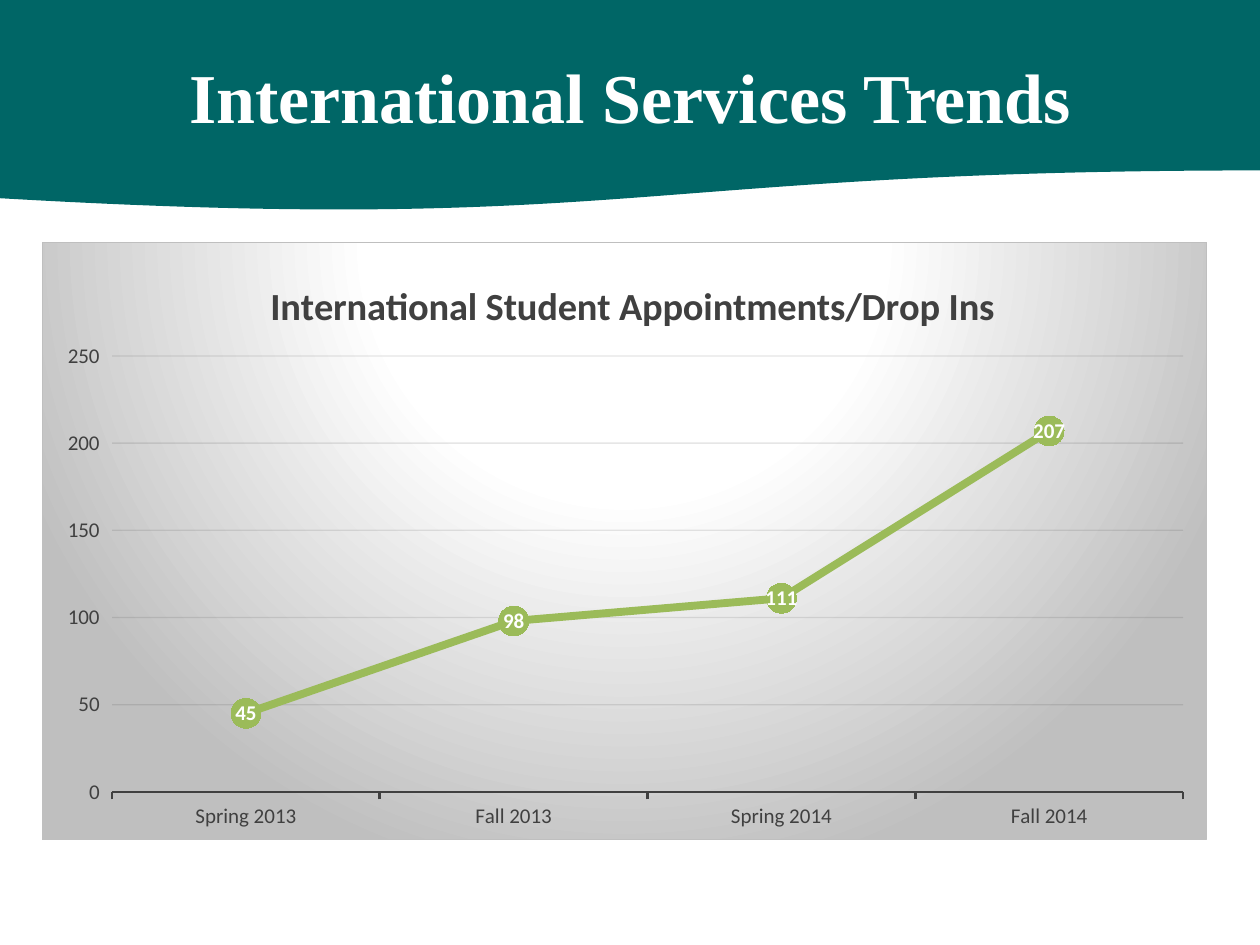
from lxml import etree
from pptx import Presentation
from pptx import util as u
from pptx.chart import data as cd
from pptx.dml import color as dc
from pptx.enum import chart as ec, shapes, text
from pptx.oxml import ns, parse_xml

NS = ns.nsdecls("a", "c")


def rgb(code):
    return dc.RGBColor.from_string(code)


def style(font, size, color, bold=False, name="Calibri"):
    font.size = u.Pt(size)
    font.color.rgb = rgb(color)
    font.bold = bold
    font.name = name


def write(frame, words, align=text.PP_ALIGN.CENTER, **look):
    para = frame.paragraphs[0]
    para.alignment = align
    run = para.add_run()
    run.text = words
    style(run.font, **look)


def stroke(line, color, width):
    line.color.rgb = rgb(color)
    line.width = u.Pt(width)


def layout(x, y, w=None, h=None, inner=False):
    parts = [("xMode", "edge"), ("yMode", "edge"), ("x", x), ("y", y)]
    if inner:
        parts = [("layoutTarget", "inner")] + parts + [("w", w), ("h", h)]
    body = "".join(f'<c:{tag} val="{val}"/>' for tag, val in parts)
    return parse_xml(f"<c:layout {NS}><c:manualLayout>{body}</c:manualLayout></c:layout>")


def place(node, item, after=None):
    for old in node.findall(ns.qn("c:layout")):
        node.remove(old)
    if after is None:
        node.insert(0, item)
    else:
        node.find(ns.qn(after)).addnext(item)


class Deck:
    teal, green, ink, gray, white = "006666", "9BBB59", "404040", "BFBFBF", "FFFFFF"

    def __init__(self):
        self.prs = Presentation()
        self.prs.slide_width = u.Inches(10)
        self.prs.slide_height = u.Inches(7.5)
        self.slide = self.prs.slides.add_slide(self.prs.slide_layouts[5])

    def box(self, *sides):
        return [u.Inches(side) for side in sides]

    def banner(self, *sides):
        wave = self.slide.shapes.add_shape(
            shapes.MSO_SHAPE.FLOWCHART_DOCUMENT, *self.box(*sides))
        wave.shadow.inherit = False
        wave.fill.solid()
        wave.fill.fore_color.rgb = rgb(self.teal)
        stroke(wave.line, self.teal, 2)

    def title(self, words, *sides):
        head = self.slide.shapes.title
        head.left, head.top, head.width, head.height = self.box(*sides)
        frame = head.text_frame
        frame.margin_left = frame.margin_right = u.Inches(0.04)
        frame.margin_top = frame.margin_bottom = u.Inches(0.04)
        frame.vertical_anchor = text.MSO_ANCHOR.MIDDLE
        frame.auto_size = text.MSO_AUTO_SIZE.NONE
        frame.word_wrap = True
        write(frame, words, size=40, color=self.white, bold=True, name="Times New Roman")
        self.slide.shapes._spTree.append(head._element)

    def chart(self, words, cats, vals, *sides):
        data = cd.CategoryChartData()
        data.categories = cats
        data.add_series("Series 1", vals)
        chart = self.slide.shapes.add_chart(
            ec.XL_CHART_TYPE.LINE_MARKERS, *self.box(*sides), data).chart
        style(chart.font, 10, "000000")
        chart.has_legend = False
        chart.has_title = True
        write(chart.chart_title.text_frame, words, size=22, color=self.ink, bold=True)
        chart.chart_title.include_in_layout = False
        place(chart.chart_title._element, layout(0.19, 0.05), "c:tx")
        self.axes(chart)
        self.series(chart.plots[0])
        root = chart._chartSpace
        place(root.chart.plotArea, layout(0.06, 0.19, 0.92, 0.73, True))
        root.chart.addnext(self.back())

    def axes(self, chart):
        for axis in (chart.category_axis, chart.value_axis):
            axis.major_tick_mark = ec.XL_TICK_MARK.OUTSIDE
            style(axis.tick_labels.font, 12, self.ink)
        stroke(chart.category_axis.format.line, self.ink, 1.5)
        side = chart.value_axis
        side.minimum_scale, side.maximum_scale, side.major_unit = 0, 250, 50
        side.format.line.fill.background()
        grid = side.major_gridlines.format.line
        stroke(grid, "0D0D0D", 0.75)
        for tint in side.major_gridlines._xAx.iter(ns.qn("a:srgbClr")):
            if tint.get("val") == "0D0D0D":
                etree.SubElement(tint, ns.qn("a:alpha"), val="10000")

    def series(self, plot):
        plot.vary_by_categories = False
        row = plot.series[0]
        row.smooth = False
        stroke(row.format.line, self.green, 4.5)
        row.marker.style = ec.XL_MARKER_STYLE.CIRCLE
        row.marker.size = 17
        row.marker.format.fill.solid()
        row.marker.format.fill.fore_color.rgb = rgb(self.green)
        row.marker.format.line.fill.background()
        tags = row.data_labels
        tags.show_value = True
        tags.position = ec.XL_LABEL_POSITION.CENTER
        style(tags.font, 12, self.white, True)

    def back(self):
        stops = [(0, self.white), (39, self.white), (100, self.gray)]
        body = "".join(f'<a:gs pos="{pos * 1000}"><a:srgbClr val="{tone}"/></a:gs>'
                       for pos, tone in stops)
        return parse_xml(
            f'<c:spPr {NS}><a:gradFill><a:gsLst>{body}</a:gsLst><a:path path="circle">'
            '<a:fillToRect l="50000" t="-80000" r="50000" b="180000"/></a:path></a:gradFill>'
            f'<a:ln w="{u.Pt(0.75)}"><a:solidFill><a:srgbClr val="{self.gray}"/>'
            '</a:solidFill></a:ln></c:spPr>')


def main():
    deck = Deck()
    deck.banner(0, 0, 10, 1.67)
    deck.title("International Services Trends", 0.5, 0.33, 9, 0.86)
    deck.chart("International Student Appointments/Drop Ins",
               ["Spring 2013", "Fall 2013", "Spring 2014", "Fall 2014"],
               [45, 98, 111, 207], 0.33, 1.92, 9.25, 4.75)
    deck.prs.save("out.pptx")


if __name__ == "__main__":
    main()
